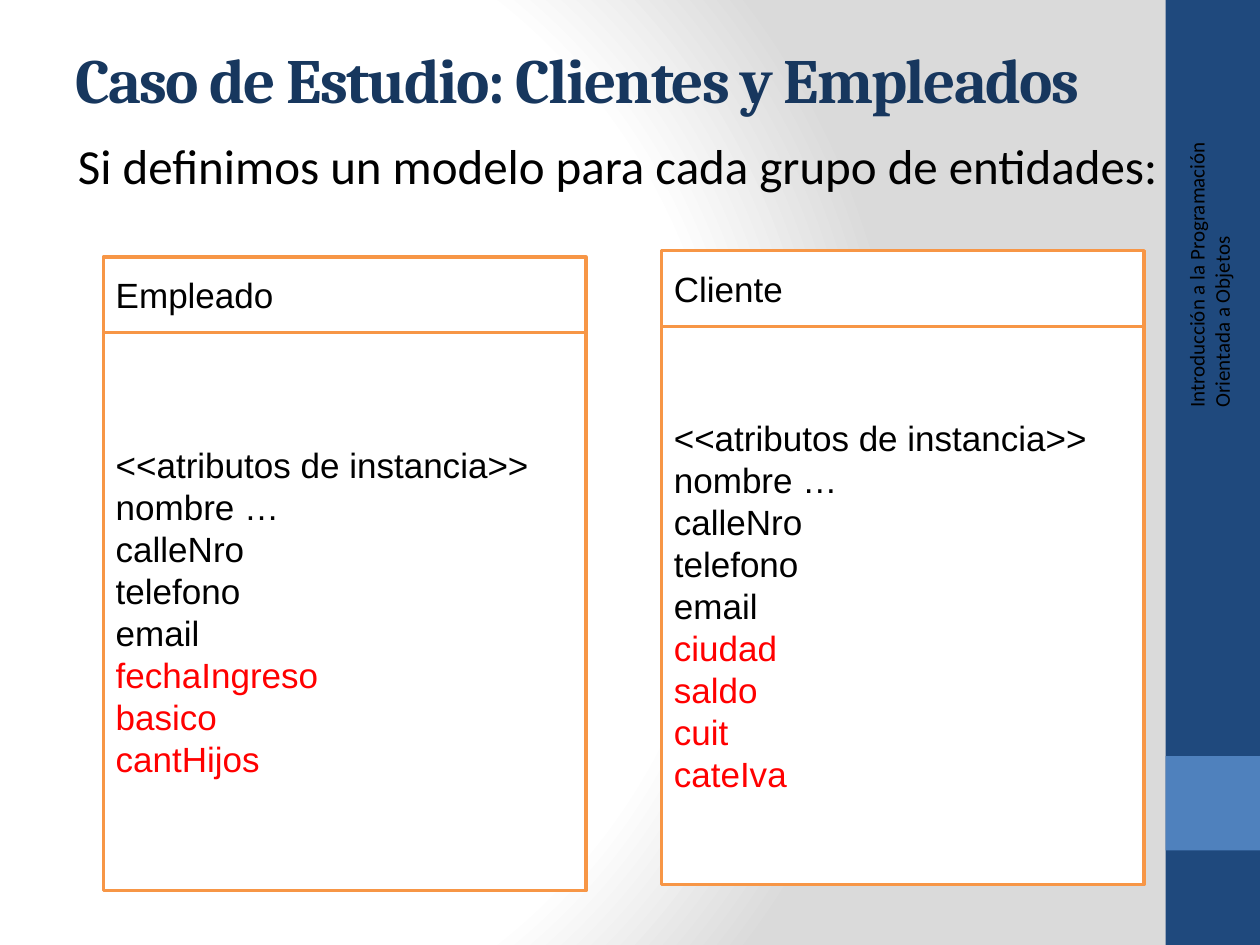
from pptx import Presentation
from pptx.dml.color import RGBColor
from pptx.enum.shapes import MSO_SHAPE
from pptx.enum.text import MSO_ANCHOR, PP_ALIGN
from pptx.oxml import parse_xml
from pptx.oxml.ns import nsdecls
from pptx.util import Inches, Pt

THEME = {
    "navy": "1F497D", "blue": "4F81BD", "title": "17375E", "border": "F79646",
    "white": "FFFFFF", "gray": "DADADA", "black": "000000", "red": "FF0000",
    "title_size": 36, "subtitle_size": 28, "class_size": 20, "footer_size": 12,
    "title_font": "Cambria", "text_font": "Calibri", "class_font": "Arial",
}

TITLE = "Caso de Estudio: Clientes y Empleados"
SUBTITLE = "Si definimos un modelo para cada grupo de entidades:"
FOOTER = "Introducción a la Programación Orientada a Objetos"
SHARED = ["<<atributos de instancia>>", "nombre …", "calleNro", "telefono", "email"]
CLASSES = [
    {"name": "Empleado", "left": 0.82, "top": 2.04,
     "own": ["fechaIngreso", "basico", "cantHijos"]},
    {"name": "Cliente", "left": 5.25, "top": 1.99,
     "own": ["ciudad", "saldo", "cuit", "cateIva"]},
]
CLASS_WIDTH, NAME_HEIGHT, BODY_HEIGHT = 3.83, 0.6, 4.43
BANDS = [((9.25, 0, 0.75, 7.5), "navy"), ((9.25, 6, 0.75, 0.75), "blue")]
BACKGROUND_STOPS = [(0, "white"), (75, "white"), (100, "gray")]


def color(name):
    return RGBColor.from_string(THEME[name])


def paint_background(slide):
    stops = "".join(
        f'<a:gs pos="{position * 1000}"><a:srgbClr val="{THEME[name]}"/></a:gs>'
        for position, name in BACKGROUND_STOPS)
    slide._element.cSld.insert(0, parse_xml(
        f'<p:bg {nsdecls("p", "a")}><p:bgPr><a:gradFill rotWithShape="1">'
        f'<a:gsLst>{stops}</a:gsLst><a:path path="circle">'
        '<a:fillToRect l="20000" t="50000" r="100000" b="50000"/></a:path>'
        '</a:gradFill><a:effectLst/></p:bgPr></p:bg>'))


def write(shape, lines, style, anchor=MSO_ANCHOR.MIDDLE, **font_values):
    frame = shape.text_frame
    frame.word_wrap = True
    frame.vertical_anchor = anchor
    values = {"name": THEME[f"{style}_font"], "size": Pt(THEME[f"{style}_size"]),
              **font_values}
    for index, (text, color_name) in enumerate(lines):
        para = frame.add_paragraph() if index else frame.paragraphs[0]
        para.alignment = PP_ALIGN.LEFT
        span = para.add_run()
        span.text = text
        for key, value in values.items():
            setattr(span.font, key, value)
        span.font.color.rgb = color(color_name)
    return frame


def add_text(slide, place, *args, **options):
    box = slide.shapes.add_textbox(*map(Inches, place))
    write(box, *args, **options)
    return box


def add_box(slide, place, fill, border=None):
    box = slide.shapes.add_shape(MSO_SHAPE.RECTANGLE, *map(Inches, place))
    box.shadow.inherit = False
    box.fill.solid()
    box.fill.fore_color.rgb = color(fill)
    if border:
        box.line.color.rgb = color(border)
        box.line.width = Pt(2)
    else:
        box.line.fill.background()
    return box


def add_class(slide, model):
    left, top = model["left"], model["top"]
    attributes = [(text, "black") for text in SHARED]
    attributes += [(text, "red") for text in model["own"]]
    sections = [(NAME_HEIGHT, [(model["name"], "black")]), (BODY_HEIGHT, attributes)]
    for height, lines in sections:
        box = add_box(slide, (left, top, CLASS_WIDTH, height), "white", "border")
        write(box, lines, "class")
        top += height


def main():
    deck = Presentation()
    deck.slide_width, deck.slide_height = Inches(10), Inches(7.5)
    slide = deck.slides.add_slide(deck.slide_layouts[6])
    paint_background(slide)
    for place, fill in BANDS:
        add_box(slide, place, fill)
    THEME["footer_font"] = THEME["subtitle_font"] = THEME["text_font"]
    footer = add_text(slide, (8.26, 1.8, 2.67, 0.4), [(FOOTER, "black")], "footer")
    footer.rotation = 270
    subtitle = add_text(slide, (0.52, 1.08, 9.21, 5.77), [(SUBTITLE, "black")],
                        "subtitle", anchor=MSO_ANCHOR.TOP)
    subtitle.text_frame.paragraphs[0].line_spacing = 0.9
    for model in CLASSES:
        add_class(slide, model)
    title = add_text(slide, (0.5, 0, 8.67, 1.25), [(TITLE, "title")], "title", bold=True)
    title.text_frame.paragraphs[0].runs[0].font._element.set("spc", "-100")
    deck.save("out.pptx")


if __name__ == "__main__":
    main()
